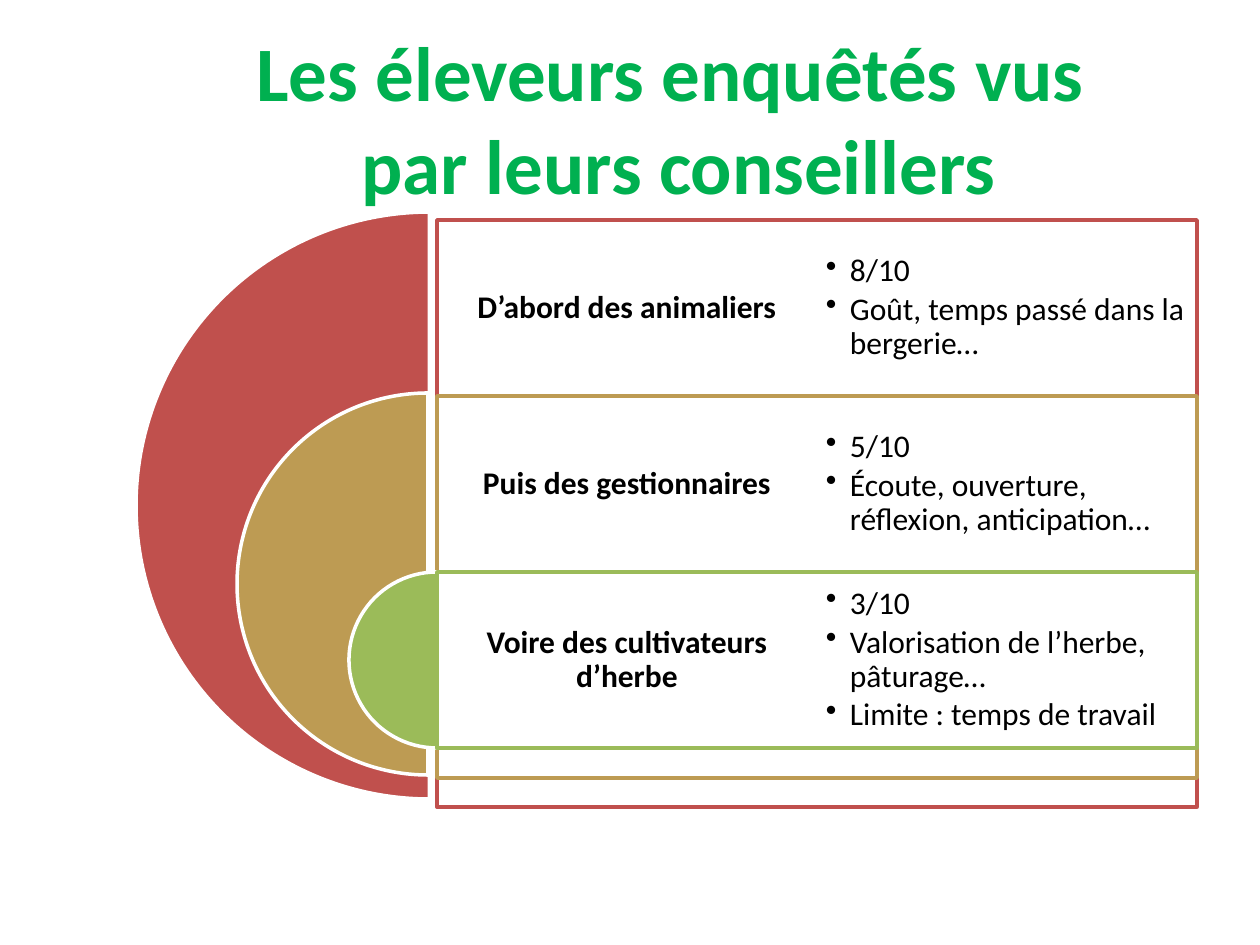
from dataclasses import dataclass

from lxml import etree
from pptx import Presentation
from pptx.dml.color import RGBColor
from pptx.enum.shapes import MSO_SHAPE
from pptx.enum.text import MSO_ANCHOR, PP_ALIGN
from pptx.oxml.ns import qn
from pptx.util import Emu, Pt

PIE, RECTANGLE = MSO_SHAPE.PIE, MSO_SHAPE.RECTANGLE
CENTER, MIDDLE = PP_ALIGN.CENTER, MSO_ANCHOR.MIDDLE
PX = 914400 / 126
FONT = "Calibri"
PANEL_LEFT, PANEL_TOP, PANEL_WIDTH = 437, 220, 760
ROW_HEIGHT = 176
COLUMN_WIDTH = PANEL_WIDTH // 2
INSET, BULLET_INDENT = 9, 24


@dataclass
class Profile:
    heading: str
    points: list[str]
    color: str
    pie_left: int
    pie_top: int
    size: int


PROFILES = [
    Profile("D’abord des animaliers",
            ["8/10", "Goût, temps passé dans la bergerie…"],
            "C0504D", 136, 212, 587),
    Profile("Puis des gestionnaires",
            ["5/10", "Écoute, ouverture, réflexion, anticipation…"],
            "BD9B53", 237, 393, 382),
    Profile("Voire des cultivateurs d’herbe",
            ["3/10", "Valorisation de l’herbe, pâturage…", "Limite : temps de travail"],
            "9BBB59", 349, 572, ROW_HEIGHT),
]


def px(length: int) -> Emu:
    return Emu(round(length * PX))


def rgb(color: str) -> RGBColor:
    return RGBColor.from_string(color)


def add_figure(slide, kind, left: int, top: int, width: int, height: int,
               fill: str, line: str):
    shape = slide.shapes.add_shape(kind, px(left), px(top), px(width), px(height))
    shape.shadow.inherit = False
    shape.fill.solid()
    shape.fill.fore_color.rgb = rgb(fill)
    shape.line.color.rgb = rgb(line)
    shape.line.width = Pt(2)
    return shape


def set_opacity(shape, percent: int) -> None:
    color = shape.fill._xPr.find(qn("a:solidFill"))[0]
    etree.SubElement(color, qn("a:alpha"), val=str(percent * 1000))


def add_bullet(paragraph) -> None:
    properties = paragraph._p.get_or_add_pPr()
    properties.set("marL", str(px(BULLET_INDENT)))
    properties.set("indent", str(-px(BULLET_INDENT)))
    etree.SubElement(properties, qn("a:buChar"), char="•")


def add_text(slide, left: int, top: int, width: int, height: int, lines: list[str],
             size: int = 18, color: str = "000000", bold: bool = False,
             bullets: bool = False, spacing: float = 0.9, inset: int = INSET) -> None:
    box = slide.shapes.add_textbox(px(left), px(top), px(width), px(height))
    frame = box.text_frame
    frame.word_wrap = True
    frame.vertical_anchor = MIDDLE
    frame.margin_left = frame.margin_right = px(inset)
    frame.margin_top = frame.margin_bottom = px(min(inset, INSET))
    for index, line in enumerate(lines):
        paragraph = frame.add_paragraph() if index else frame.paragraphs[0]
        paragraph.text = line
        if bullets:
            add_bullet(paragraph)
        else:
            paragraph.alignment = CENTER
        paragraph.line_spacing = spacing
        if index:
            paragraph.space_before = Pt(2.7)
        paragraph.font.name = FONT
        paragraph.font.size = Pt(size)
        paragraph.font.bold = bold
        paragraph.font.color.rgb = rgb(color)


def add_profile(slide, profile: Profile, top: int) -> None:
    pie = add_figure(slide, PIE, profile.pie_left, profile.pie_top,
                     profile.size, profile.size, profile.color, "FFFFFF")
    pie.adjustments[0], pie.adjustments[1] = 54, 162
    panel = add_figure(slide, RECTANGLE, PANEL_LEFT, top, PANEL_WIDTH,
                       profile.size, "FFFFFF", profile.color)
    set_opacity(panel, 90)
    add_text(slide, PANEL_LEFT, top, COLUMN_WIDTH, ROW_HEIGHT,
             [profile.heading], bold=True)


def main() -> None:
    presentation = Presentation()
    presentation.slide_width, presentation.slide_height = px(1260), px(945)
    slide = presentation.slides.add_slide(presentation.slide_layouts[6])
    add_text(slide, 144, 38, 1053, 158,
             ["Les éleveurs enquêtés vus\v par leurs conseillers"],
             size=44, color="00B050", bold=True, spacing=1.0, inset=13)
    tops = [PANEL_TOP + row * ROW_HEIGHT for row in range(len(PROFILES))]
    for profile, top in zip(PROFILES, tops):
        add_profile(slide, profile, top)
    for profile, top in zip(PROFILES, tops):
        add_text(slide, PANEL_LEFT + COLUMN_WIDTH, top, COLUMN_WIDTH, ROW_HEIGHT,
                 profile.points, bullets=True)
    presentation.save("out.pptx")


if __name__ == "__main__":
    main()
